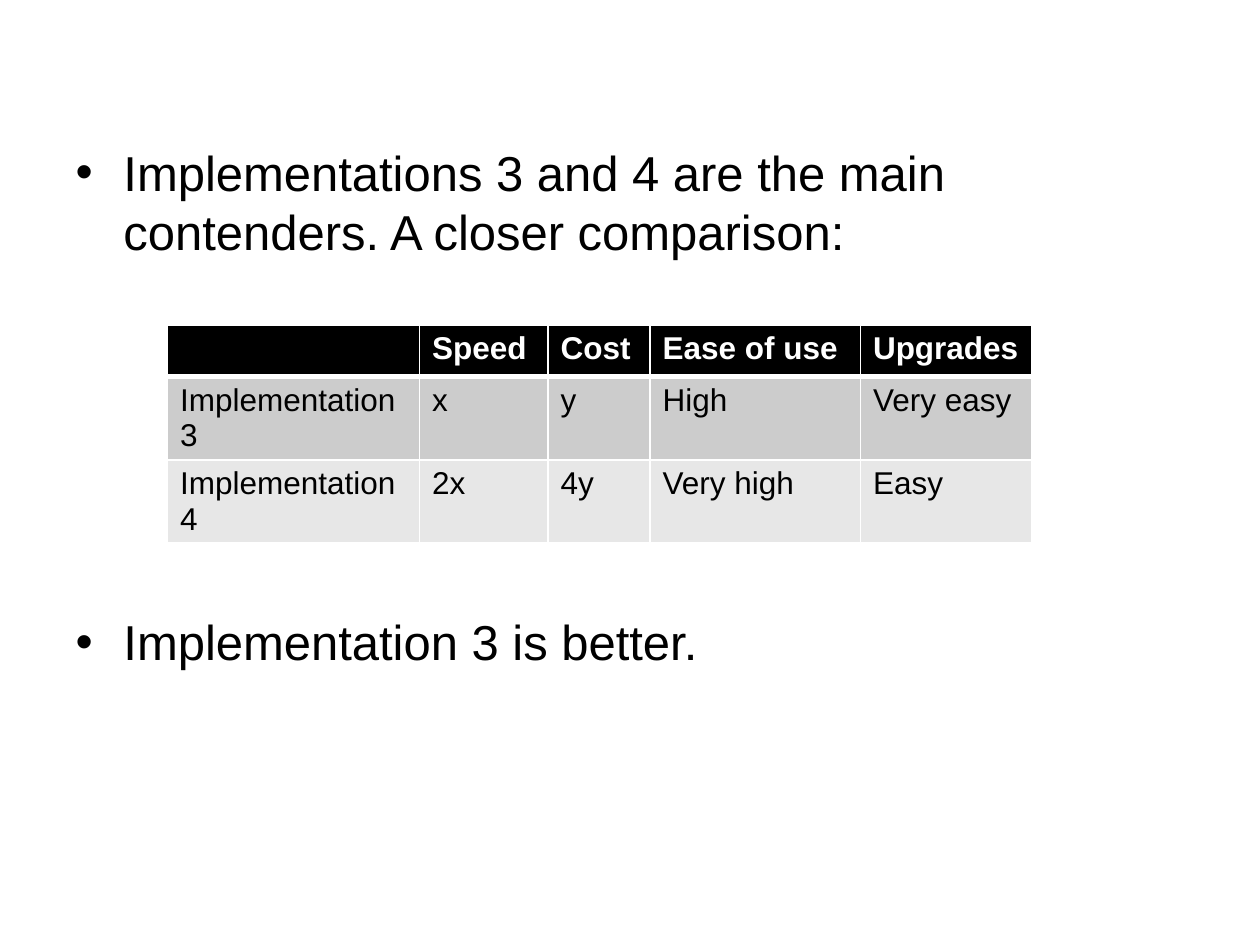
import pptx
import pptx.dml.color
import pptx.enum.text
import pptx.oxml
import pptx.oxml.ns
import pptx.util
from pptx.util import Inches

COLORS = {
    "text": "000000",
    "header": "000000",
    "header_text": "FFFFFF",
    "border": "FFFFFF",
    "odd_row": "CCCCCC",
    "even_row": "E7E7E7",
}
FONT = "Arial"

COMPARISON = [
    ["", "Speed", "Cost", "Ease of use", "Upgrades"],
    ["Implementation 3", "x", "y", "High", "Very easy"],
    ["Implementation 4", "2x", "4y", "Very high", "Easy"],
]
COLUMN_WIDTHS = [2, 1.02, 0.81, 1.67, 1.36]
ROW_HEIGHTS = [0.41, 0.66, 0.66]


def rgb(name):
    return pptx.dml.color.RGBColor.from_string(COLORS[name])


def write(paragraph, text, size=18, color="text", bold=False):
    paragraph.text = text
    font = paragraph.font
    font.name = FONT
    font.size = pptx.util.Pt(size)
    font.bold = bold
    font.color.rgb = rgb(color)


def add_bullet(paragraph, indent):
    properties = paragraph._p.get_or_add_pPr()
    properties.set("marL", str(indent))
    properties.set("indent", str(-indent))
    for tag, attribute, value in (("buFont", "typeface", FONT), ("buChar", "char", "•")):
        bullet = pptx.oxml.parse_xml(
            f'<a:{tag} {pptx.oxml.ns.nsdecls("a")} {attribute}="{value}"/>')
        properties.append(bullet)


def set_borders(cell, bottom_width):
    properties = cell._tc.get_or_add_tcPr()
    widths = {"lnL": 1, "lnR": 1, "lnT": 1, "lnB": bottom_width}
    for position, (side, width) in enumerate(widths.items()):
        border = pptx.oxml.parse_xml(
            f'<a:{side} {pptx.oxml.ns.nsdecls("a")} w="{pptx.util.Pt(width)}">'
            f'<a:solidFill><a:srgbClr val="{COLORS["border"]}"/></a:solidFill>'
            f'</a:{side}>')
        properties.insert(position, border)


def place_findings(body, left, top, width, height):
    body.left, body.top, body.width, body.height = left, top, width, height
    frame = body.text_frame
    frame.word_wrap = True
    frame.auto_size = pptx.enum.text.MSO_AUTO_SIZE.NONE
    # The second finding sits below the comparison table
    findings = [
        ("Implementations 3 and 4 are the main contenders. A closer comparison:", 0),
        ("Implementation 3 is better.", 201),
    ]
    for index, (finding, space_before) in enumerate(findings):
        paragraph = frame.add_paragraph() if index else frame.paragraphs[0]
        add_bullet(paragraph, Inches(0.38))
        paragraph.space_before = pptx.util.Pt(space_before)
        write(paragraph, finding, size=28)


def place_comparison(slide, left, top, width, height):
    table = slide.shapes.add_table(
        len(COMPARISON), len(COLUMN_WIDTHS), left, top, width, height).table
    for column, column_width in zip(table.columns, COLUMN_WIDTHS):
        column.width = Inches(column_width)
    for row, row_height in zip(table.rows, ROW_HEIGHTS):
        row.height = Inches(row_height)
    row_fills = ["header", "odd_row", "even_row"]
    for row_index, (row, values) in enumerate(zip(table.rows, COMPARISON)):
        is_header = row_index == 0
        for cell, value in zip(row.cells, values):
            cell.fill.solid()
            cell.fill.fore_color.rgb = rgb(row_fills[row_index])
            set_borders(cell, 3 if is_header else 1)
            write(cell.text_frame.paragraphs[0], value, bold=is_header,
                  color="header_text" if is_header else "text")


def main():
    deck = pptx.Presentation()
    deck.slide_width, deck.slide_height = Inches(10), Inches(7.5)
    slide = deck.slides.add_slide(deck.slide_layouts[1])

    # This slide has no title
    title = slide.shapes.title
    title.element.getparent().remove(title.element)

    # Bulleted findings
    place_findings(slide.placeholders[1],
                   Inches(0.5), Inches(1.08), Inches(8.58), Inches(5.5))

    # Comparison of the two contenders
    place_comparison(slide, Inches(1.33), Inches(2.58),
                     Inches(sum(COLUMN_WIDTHS)), Inches(sum(ROW_HEIGHTS)))

    deck.save("out.pptx")


if __name__ == "__main__":
    main()
